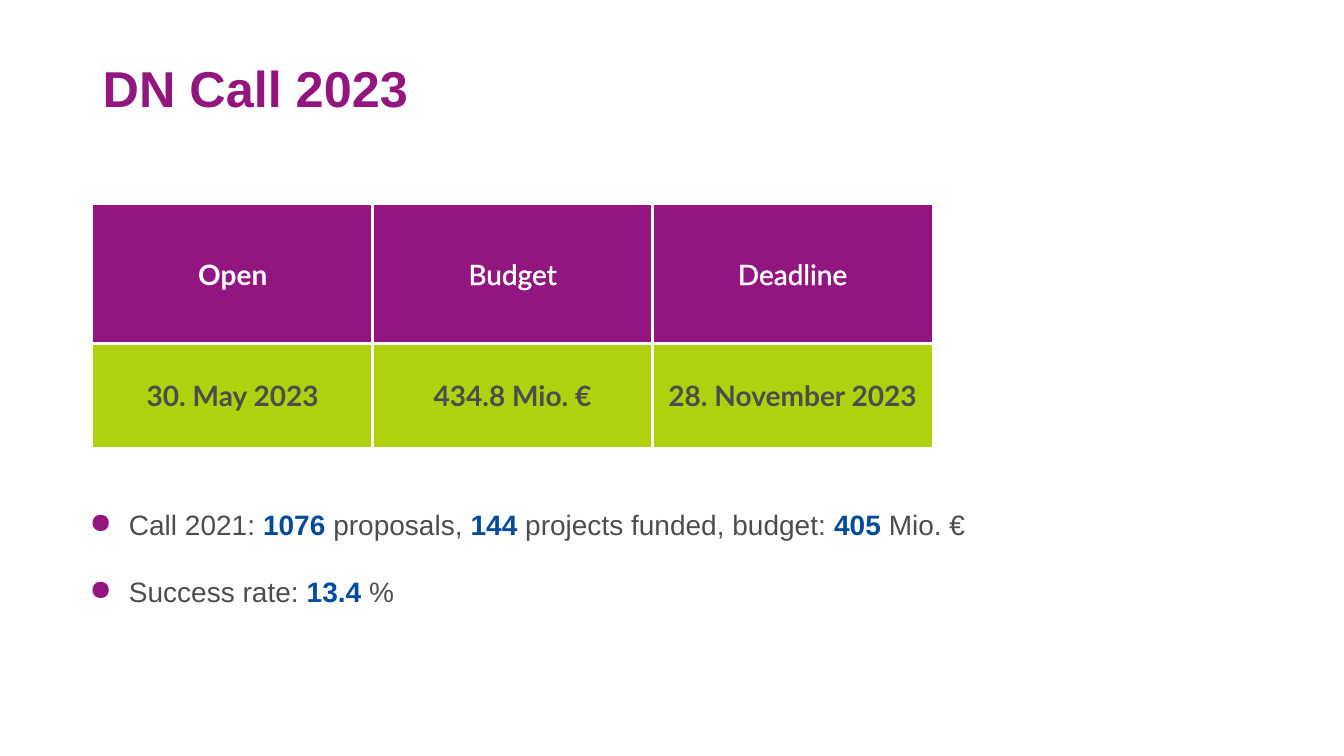
from dataclasses import dataclass

from lxml.etree import SubElement
from pptx import Presentation
from pptx.dml.color import RGBColor
from pptx.enum.text import MSO_ANCHOR, PP_ALIGN
from pptx.oxml import parse_xml
from pptx.oxml.ns import nsdecls, qn
from pptx.util import Inches, Pt


@dataclass(frozen=True)
class Theme:
    purple: str = "931680"
    lime: str = "B0D10E"
    blue: str = "024B9C"
    grey: str = "4D4D4D"
    white: str = "FFFFFF"
    text_font: str = "Arial"
    table_font: str = "Lato"
    title_size: int = 36
    text_size: int = 20


theme = Theme()


def set_font(font, name, size, color, bold):
    font.name, font.size, font.bold = name, Pt(size), bold
    font.color.rgb = RGBColor.from_string(color)


def white_line(tag, width):
    return parse_xml(
        f'<a:{tag} {nsdecls("a")} w="{Pt(width)}"><a:solidFill>'
        f'<a:srgbClr val="{theme.white}"/></a:solidFill></a:{tag}>')


presentation = Presentation()
presentation.slide_width = Inches(13.33)
presentation.slide_height = Inches(7.5)
slide = presentation.slides.add_slide(presentation.slide_layouts[6])

# Title
title = slide.shapes.add_textbox(
    Inches(0.92), Inches(0.51), Inches(11.5), Inches(0.66)).text_frame
title.word_wrap = True
title.vertical_anchor = MSO_ANCHOR.BOTTOM
title.margin_bottom = 0
heading = title.paragraphs[0]
heading.text = "DN Call 2023"
set_font(heading.font, theme.text_font, theme.title_size, theme.purple, True)

# Call dates and budget
call_rows = [
    ["Open", "Budget", "Deadline"],
    ["30. May 2023", "434.8 Mio. €", "28. November 2023"],
]
call_table = slide.shapes.add_table(
    2, 3, Inches(0.92), Inches(2.03), Inches(8.33), Inches(2.4)).table
call_table.horz_banding = False
for row, height in zip(call_table.rows, (1.38, 1.03)):
    row.height = Inches(height)

for r, labels in enumerate(call_rows):
    for c, label in enumerate(labels):
        cell = call_table.cell(r, c)
        cell.vertical_anchor = MSO_ANCHOR.MIDDLE
        # Thin outer edges, thicker inner ones
        outer_edges = {"lnL": c == 0, "lnR": c == 2, "lnT": r == 0, "lnB": r == 1}
        for edge, is_outer in outer_edges.items():
            cell._tc.get_or_add_tcPr().append(white_line(edge, 1 if is_outer else 2.25))
        cell.fill.solid()
        cell.fill.fore_color.rgb = RGBColor.from_string(
            theme.lime if r else theme.purple)
        entry = cell.text_frame.paragraphs[0]
        entry.text = label
        entry.alignment = PP_ALIGN.CENTER
        outlined = r == 0 and c > 0
        set_font(entry.font, theme.table_font, theme.text_size,
                 theme.grey if r else theme.white, not outlined)
        if outlined:
            entry.runs[0]._r.get_or_add_rPr().insert(0, white_line("ln", 0.75))

# Results of the previous call: every second piece is a highlighted figure
results = [
    ["Call 2021: ", "1076", " proposals, ", "144",
     " projects funded, budget: ", "405", " Mio. €"],
    ["Success rate: ", "13.4", " %"],
]
results_frame = slide.shapes.add_textbox(
    Inches(0.79), Inches(4.82), Inches(11.63), Inches(1.25)).text_frame
results_frame.word_wrap = True
for i, pieces in enumerate(results):
    result = results_frame.add_paragraph() if i else results_frame.paragraphs[0]
    result.line_spacing = 1.5
    if i:
        result.space_before = Pt(12)
    properties = result._p.get_or_add_pPr()
    properties.set("marL", str(Inches(0.39)))
    properties.set("indent", str(Inches(-0.39)))
    bullet_color = SubElement(properties, qn("a:buClr"))
    SubElement(bullet_color, qn("a:srgbClr"), val=theme.purple)
    SubElement(properties, qn("a:buChar"), char="●")
    set_font(result.font, theme.text_font, theme.text_size, theme.grey, False)
    for j, piece in enumerate(pieces):
        run = result.add_run()
        run.text = piece
        if j % 2:
            run.font.bold = True
            run.font.color.rgb = RGBColor.from_string(theme.blue)

presentation.save("out.pptx")
